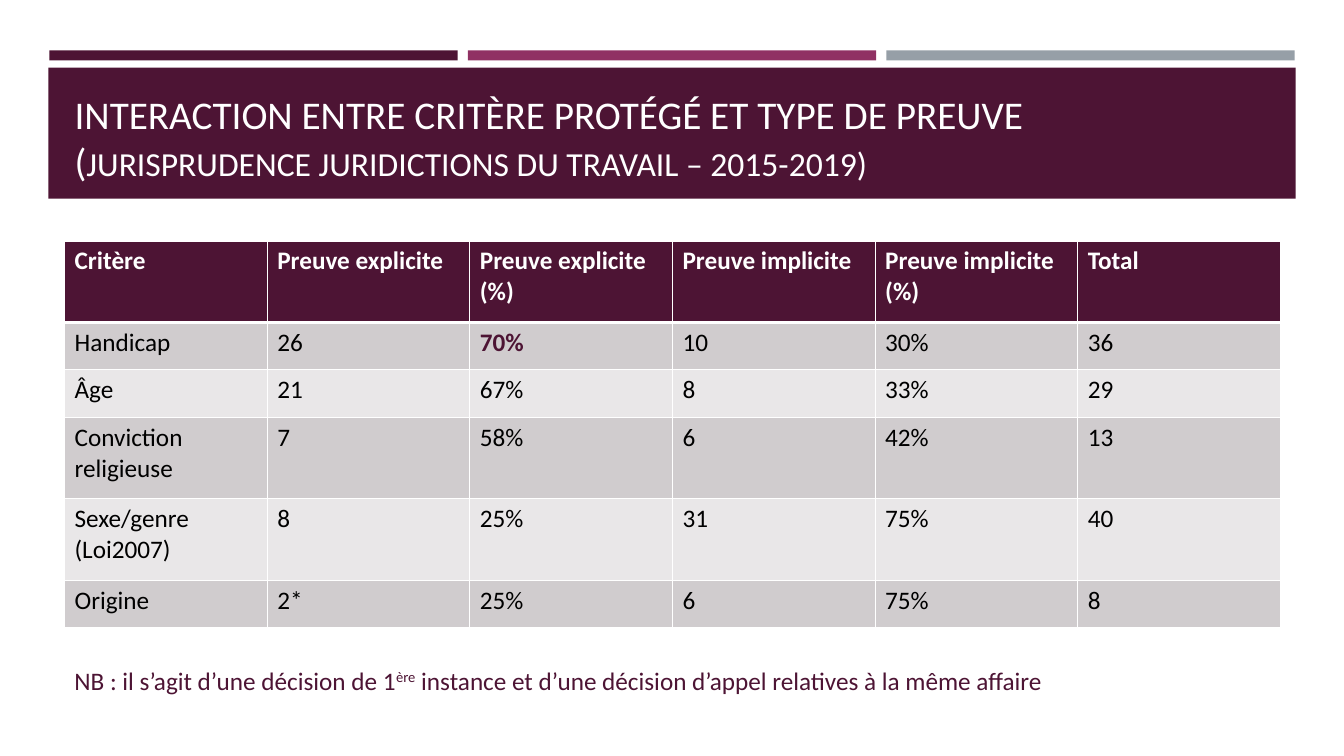
"""Build the slide on protected criteria and types of evidence."""
from pptx import Presentation
from pptx.dml.color import RGBColor
from pptx.enum.shapes import MSO_SHAPE
from pptx.enum.text import MSO_ANCHOR, MSO_AUTO_SIZE, PP_ALIGN
from pptx.oxml import parse_xml
from pptx.oxml.ns import nsdecls
from pptx.util import Inches, Pt

RECT = MSO_SHAPE.RECTANGLE
BOTTOM = MSO_ANCHOR.BOTTOM
FIXED = MSO_AUTO_SIZE.NONE
LEFT = PP_ALIGN.LEFT

FONT = "Calibri"
PLUM, WHITE, BLACK = "4D1434", "FFFFFF", "000000"
BANDS = ["E9E7E8", "D0CCCE"]
BARS = [PLUM, "903163", "969FA7"]
TITLE = [("INTERACTION ENTRE CRITÈRE PROTÉGÉ ET TYPE DE PREUVE\v(", 28),
         ("JURISPRUDENCE JURIDICTIONS DU TRAVAIL – 2015-2019)", 24)]
ROWS = [
    ("Critère", "Preuve explicite", "Preuve explicite (%)",
     "Preuve implicite", "Preuve implicite (%)", "Total"),
    ("Handicap", "26", "70%", "10", "30%", "36"),
    ("Âge", "21", "67%", "8", "33%", "29"),
    ("Conviction religieuse", "7", "58%", "6", "42%", "13"),
    ("Sexe/genre (Loi2007)", "8", "25%", "31", "75%", "40"),
    ("Origine", "2*", "25%", "6", "75%", "8"),
]
TALL, LOW = 0.81, 0.47
HEIGHTS = [TALL, LOW, LOW, TALL, TALL, LOW]
KEY = (1, 2)
NOTE = [("NB : il s’agit d’une décision de 1", None), ("ère", "30000"),
        (" instance et d’une décision d’appel relatives à la même affaire", None)]
X, WIDTH = 0.64, 12.06


def rgb(code):
    return RGBColor.from_string(code)


def style(font, size, color, bold=False):
    font.name, font.size, font.bold = FONT, Pt(size), bold
    font.color.rgb = rgb(color)


def place(shape, *box):
    shape.left, shape.top, shape.width, shape.height = map(Inches, box)


def add_bar(slide, color, *box):
    bar = slide.shapes.add_shape(RECT, *map(Inches, box))
    bar.shadow.inherit = False
    bar.fill.solid()
    bar.fill.fore_color.rgb = rgb(color)
    bar.line.fill.background()


def add_title(slide):
    title = slide.shapes.title
    place(title, X, 0.77, WIDTH, 1.11)
    slide.shapes._spTree.append(title._element)
    frame = title.text_frame
    frame.auto_size, frame.vertical_anchor = FIXED, BOTTOM
    para = frame.paragraphs[0]
    para.alignment = LEFT
    for text, size in TITLE:
        first, *rest = text.split("\v")
        for i, part in enumerate([first] + rest):
            if i:
                para.add_line_break()
            run = para.add_run()
            run.text = part
            style(run.font, size, WHITE)


def add_edges(cell, row):
    props = cell._tc.get_or_add_tcPr()
    thick = {(0, "B"), (1, "T")}
    for side in "LRTB":
        width = Pt(3 if (row, side) in thick else 1)
        props.append(parse_xml(
            f'<a:ln{side} {nsdecls("a")} w="{width}"><a:solidFill>'
            f'<a:srgbClr val="{WHITE}"/></a:solidFill></a:ln{side}>'))


def add_grid(slide):
    count = len(ROWS[0])
    box = map(Inches, (X, 2.39, WIDTH, sum(HEIGHTS)))
    table = slide.shapes.add_table(len(ROWS), count, *box).table
    for col in table.columns:
        col.width = Inches(WIDTH / count)
    for r, texts in enumerate(ROWS):
        table.rows[r].height = Inches(HEIGHTS[r])
        for c, text in enumerate(texts):
            cell = table.cell(r, c)
            add_edges(cell, r)
            cell.fill.solid()
            cell.fill.fore_color.rgb = rgb(BANDS[r % 2] if r else PLUM)
            cell.text = text
            key = (r, c) == KEY
            color = WHITE if r == 0 else PLUM if key else BLACK
            style(cell.text_frame.paragraphs[0].font, 18, color, r == 0 or key)


def add_note(slide):
    box = slide.shapes.add_textbox(*map(Inches, (X, 6.55, WIDTH, 0.4)))
    box.text_frame.word_wrap = True
    para = box.text_frame.paragraphs[0]
    style(para.font, 18, PLUM)
    for text, lift in NOTE:
        run = para.add_run()
        run.text = text
        style(run.font, 18, PLUM)
        if lift:
            run.font._element.set("baseline", lift)


def main():
    deck = Presentation()
    deck.slide_width, deck.slide_height = Inches(13.33), Inches(7.5)
    slide = deck.slides.add_slide(deck.slide_layouts[5])
    for i, color in enumerate(BARS):
        add_bar(slide, color, 0.49 + 4.15 * i, 0.5, 4.05, 0.1)
    add_bar(slide, PLUM, 0.48, 0.67, 12.37, 1.3)
    add_title(slide)
    add_grid(slide)
    add_note(slide)
    deck.save("out.pptx")


if __name__ == "__main__":
    main()
